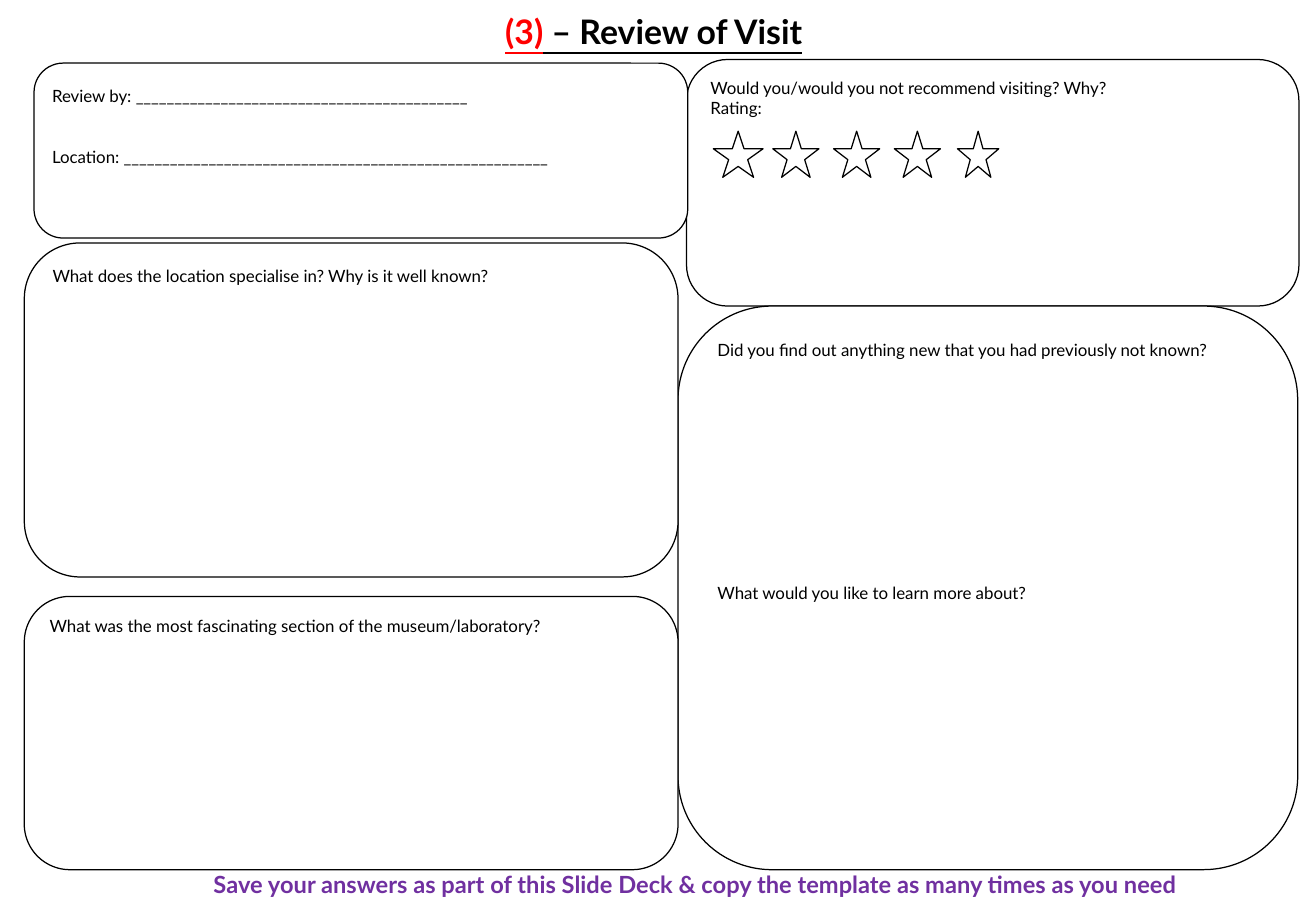
from pptx import Presentation
from pptx.dml.color import RGBColor
from pptx.enum.shapes import MSO_SHAPE
from pptx.enum.text import MSO_ANCHOR, MSO_AUTO_SIZE, PP_ALIGN
from pptx.util import Inches, Pt

BLACK = RGBColor(0, 0, 0)
WHITE = RGBColor(255, 255, 255)
RED = RGBColor(255, 0, 0)
PURPLE = RGBColor(0x70, 0x30, 0xA0)
FONT = "Lato"
RECT = MSO_SHAPE.RECTANGLE
PANEL = MSO_SHAPE.FLOWCHART_ALTERNATE_PROCESS
STAR = MSO_SHAPE.STAR_5_POINT
TOP = MSO_ANCHOR.TOP
LEFT = PP_ALIGN.LEFT
CENTER = PP_ALIGN.CENTER
GROW = MSO_AUTO_SIZE.SHAPE_TO_FIT_TEXT

PANELS = [
    ((5.65, 0.49, 5.04, 2.03),
     ["Would you/would you not recommend visiting? Why?", "Rating:"], 0),
    ((5.58, 2.52, 5.1, 4.64),
     ["Did you find out anything new that you had previously not known?",
      "What would you like to learn more about?"], 132),
    ((0.2, 4.91, 5.38, 2.25),
     ["What was the most fascinating section of the museum/laboratory?"], 0),
    ((0.2, 2, 5.38, 2.75),
     ["What does the location specialise in? Why is it well known?"], 0),
    ((0.28, 0.52, 5.38, 1.44), [], 0),
]
STARS = [(5.87, 0.41), (6.36, 0.38), (6.86, 0.38), (7.36, 0.38), (7.88, 0.34)]


def add_box(slide, kind, place, line=BLACK):
    box = slide.shapes.add_shape(kind, *map(Inches, place))
    box.shadow.inherit = False
    box.fill.solid()
    box.fill.fore_color.rgb = WHITE
    if line is None:
        box.line.fill.background()
    else:
        box.line.color.rgb = line
        box.line.width = Pt(0.75)
    return box


def set_font(font, size, color=BLACK, bold=False):
    font.name = FONT
    font.size = Pt(size)
    font.color.rgb = color
    font.bold = bold


def write_lines(box, lines, gap=0):
    frame = box.text_frame
    frame.word_wrap = True
    frame.vertical_anchor = TOP
    for index, line in enumerate(lines):
        para = frame.add_paragraph() if index else frame.paragraphs[0]
        para.text = line
        para.alignment = LEFT
        para.space_before = Pt(gap if index else 0)
        set_font(para.font, 10)


def add_title(slide):
    frame = add_box(slide, RECT, (1.48, 0.04, 7.8, 0.4), None).text_frame
    frame.word_wrap = True
    frame.vertical_anchor = TOP
    para = frame.paragraphs[0]
    para.alignment = CENTER
    for text, color in (("(3)", RED), (" – Review of Visit", BLACK)):
        run = para.add_run()
        run.text = text
        set_font(run.font, 20, color, True)
        run.font.underline = True


def add_footer(slide):
    box = slide.shapes.add_textbox(*map(Inches, (0.33, 7.11, 10.83, 0.34)))
    frame = box.text_frame
    frame.word_wrap = True
    frame.auto_size = GROW
    para = frame.paragraphs[0]
    para.text = ("Save your answers as part of this Slide Deck & copy "
                 "the template as many times as you need ")
    para.alignment = CENTER
    set_font(para.font, 14, PURPLE, True)


def main():
    deck = Presentation()
    deck.slide_width = Inches(10.83)
    deck.slide_height = Inches(7.5)
    slide = deck.slides.add_slide(deck.slide_layouts[6])
    add_title(slide)
    for place, lines, gap in PANELS:
        write_lines(add_box(slide, PANEL, place), lines, gap)
    form = add_box(slide, RECT, (0.33, 0.66, 5.25, 1.03), None)
    write_lines(form, ["Review by: " + "_" * 43, "Location: " + "_" * 55], 24)
    for left, width in STARS:
        add_box(slide, STAR, (left, 1.08, width, 0.38))
    add_footer(slide)
    deck.save("out.pptx")


if __name__ == "__main__":
    main()
